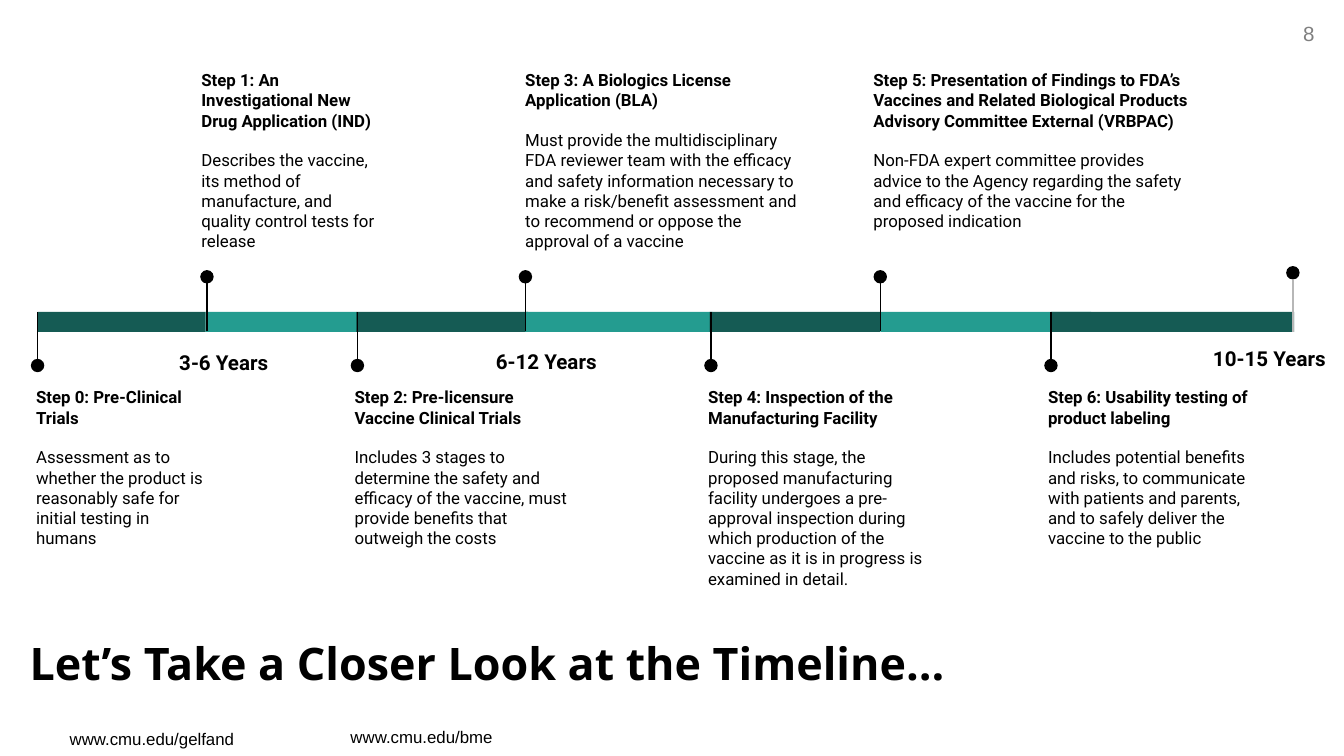
from pptx import Presentation
from pptx.dml.color import RGBColor
from pptx.enum.shapes import MSO_CONNECTOR, MSO_SHAPE
from pptx.enum.text import MSO_ANCHOR, MSO_AUTO_SIZE, PP_ALIGN
from pptx.oxml.ns import qn
from pptx.util import Pt
from lxml import etree

PX = 9144  # 100 px to the inch
LINE = MSO_CONNECTOR.STRAIGHT
RECT, OVAL = MSO_SHAPE.RECTANGLE, MSO_SHAPE.OVAL
LEFT, MID, RIGHT = PP_ALIGN.LEFT, PP_ALIGN.CENTER, PP_ALIGN.RIGHT
BLACK, GREY, SILVER = "000000", "7F7F7F", "B7B7B7"
DARK, LIGHT = "155B54", "249C90"
BAR_TOP, BAR_H, DOT = 232, 15, 10

# name, detail, bar left, bar width, stem x, text left, text width, text height
STEPS = [
    ("Step 0: Pre-Clinical Trials",
     "Assessment as to whether the product is reasonably safe for initial "
     "testing in humans",
     28, 125, 28, 17, 148, 103),
    ("Step 1: An Investigational New Drug Application (IND)",
     "Describes the vaccine, its method of manufacture, and quality control "
     "tests for release",
     153, 112, 154, 140, 153, 161),
    ("Step 2: Pre-licensure Vaccine Clinical Trials",
     "Includes 3 stages to determine the safety and efficacy of the vaccine, "
     "must provide benefits that outweigh the costs",
     265, 128, 266, 254, 184, 103),
    ("Step 3: A Biologics License Application (BLA)",
     "Must provide the multidisciplinary FDA reviewer team with the efficacy "
     "and safety information necessary to make a risk/benefit assessment and "
     "to recommend or oppose the approval of a vaccine",
     391, 139, 391, 381, 230, 115),
    ("Step 4: Inspection of the Manufacturing Facility",
     "During this stage, the proposed manufacturing facility undergoes a "
     "pre-approval inspection during which production of the vaccine as it "
     "is in progress is examined in detail.",
     528, 127, 529, 517, 188, 103),
    ("Step 5: Presentation of Findings to FDA’s Vaccines and Related "
     "Biological Products Advisory Committee External (VRBPAC)",
     "Non-FDA expert committee provides advice to the Agency regarding the "
     "safety and efficacy of the vaccine for the proposed indication",
     655, 157, 655, 640, 260, 115),
    ("Step 6: Usability testing of product labeling",
     "Includes potential benefits and risks, to communicate with patients "
     "and parents, and to safely deliver the vaccine to the public",
     782, 181, 782, 770, 173, 103),
]

prs = Presentation()
prs.slide_width = 1000 * PX
prs.slide_height = prs.slide_width * 9 // 16
slide = prs.slides.add_slide(prs.slide_layouts[5])
shapes = slide.shapes


def style(para, size, face, color=BLACK, bold=False, align=LEFT):
    para.alignment = align
    font = para.font
    font.size, font.name, font.bold = Pt(size), face, bold
    font.color.rgb = RGBColor.from_string(color)


def add(kind, x, y, w, h, fill=None):
    """Add a text box when kind is None, else a plain filled shape."""
    box = [n * PX for n in (x, y, w, h)]
    if kind is None:
        frame = shapes.add_textbox(*box).text_frame
        frame.word_wrap = True
        frame.margin_left = frame.margin_right = 10 * PX
        frame.margin_top = frame.margin_bottom = 10 * PX
        return frame
    shape = shapes.add_shape(kind, *box)
    shape.shadow.inherit = False
    shape.fill.solid()
    shape.fill.fore_color.rgb = RGBColor.from_string(fill)
    shape.line.fill.background()
    return shape


# Title
title = shapes.title
title.left, title.top, title.width, title.height = (
    n * PX for n in (12, 464, 841, 59))
frame = title.text_frame
frame.text = "Let’s Take a Closer Look at the Timeline..."
frame.auto_size = MSO_AUTO_SIZE.NONE
frame.vertical_anchor = MSO_ANCHOR.BOTTOM
frame.margin_left = frame.margin_right = 10 * PX
frame.margin_top = frame.margin_bottom = 10 * PX
style(frame.paragraphs[0], 24, "Open Sans", bold=True)

# Page number and web addresses
for text, x, y, w, h, size, color, align in [
        ("8", 933, 11, 55, 29, 11, GREY, RIGHT),
        ("www.cmu.edu/gelfand", 42, 537, 144, 25, 9, BLACK, LEFT),
        ("www.cmu.edu/bme", 251, 536, 144, 25, 9, BLACK, LEFT)]:
    frame = add(None, x, y, w, h)
    frame.margin_top = frame.margin_bottom = 5 * PX
    frame.text = text
    style(frame.paragraphs[0], size, "Arial", color, align=align)

# Bars and step texts: even steps hang below the bar, odd ones stand above
marks = []
for i, (name, detail, left, width, stem, x, w, h) in enumerate(STEPS):
    above = i % 2 == 1
    add(RECT, left, BAR_TOP, width, BAR_H, LIGHT if above else DARK)
    frame = add(None, x, 42 if above else 278, w, h)
    frame.text = name
    style(frame.paragraphs[0], 9, "Roboto", bold=True)
    para = frame.add_paragraph()
    para.text = detail
    para.space_before = Pt(10.5)
    style(para, 9, "Roboto")
    if above:
        marks.append((stem, 201, 207, 246, BLACK))
    else:
        marks.append((stem, 267, 271, BAR_TOP, BLACK))
marks.append((962, 198, 208, 247, SILVER))

# Dots and stems
for x, top, start, end, color in marks:
    add(OVAL, x - DOT // 2, top, DOT, DOT, BLACK)
    stem = shapes.add_connector(LINE, x * PX, start * PX, x * PX, end * PX)
    stem.line.color.rgb = RGBColor.from_string(color)
    stem.line.width = Pt(0.75)
    etree.SubElement(stem._element.spPr, qn("a:effectLst"))

# Durations
for text, x, y, w in [("3-6 Years", 119, 248, 95),
                      ("6-12 Years", 356, 247, 101),
                      ("10-15 Years", 889, 245, 111)]:
    frame = add(None, x, y, w, 41)
    frame.text = text
    para = frame.paragraphs[0]
    para.line_spacing = 1.15
    style(para, 11, "Roboto", bold=True, align=MID)

prs.save("out.pptx")
